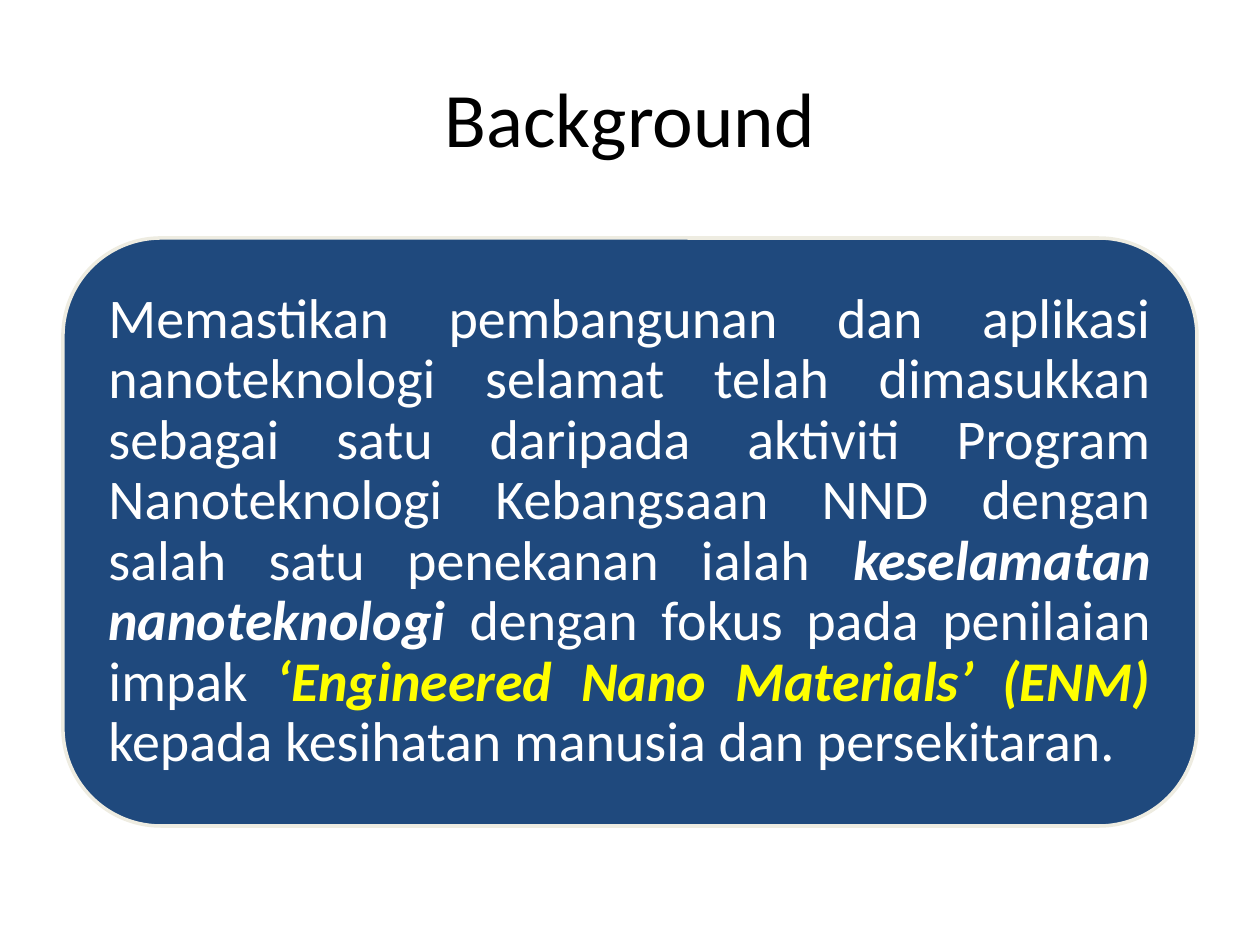
from pptx import Presentation
from pptx.dml.color import RGBColor as RGB
from pptx.enum.shapes import MSO_SHAPE as SHAPE
from pptx.enum.text import MSO_ANCHOR as ANCHOR, PP_ALIGN as ALIGN
from pptx.util import Pt

COLORS = {
    "title": "000000",
    "panel": "1F497D",
    "border": "EEECE1",
    "body": "FFFFFF",
    "accent": "FFFF00",
}

BODY = [
    ("Memastikan pembangunan dan aplikasi nanoteknologi selamat telah "
     "dimasukkan sebagai satu daripada aktiviti Program Nanoteknologi "
     "Kebangsaan NND dengan salah satu penekanan ialah ", "body", False),
    ("keselamatan nanoteknologi ", "body", True),
    ("dengan fokus pada penilaian impak ", "body", False),
    ("‘Engineered Nano Materials’ (ENM) ", "accent", True),
    ("kepada kesihatan manusia dan persekitaran.", "body", False),
]


class SlideBuilder:
    font = "Calibri"
    title_size = 44
    body_size = 32
    inset = 9.6

    def __init__(self, slide):
        self.slide = slide

    def color(self, name):
        return RGB.from_string(COLORS[name])

    def style_run(self, r, size, color, strong=False):
        r.font.name = self.font
        r.font.size = Pt(size)
        r.font.color.rgb = self.color(color)
        r.font.bold = r.font.italic = strong

    def title(self, text, left, top, width, height):
        s = self.slide.shapes.add_textbox(Pt(left), Pt(top), Pt(width), Pt(height))
        tf = s.text_frame
        tf.word_wrap = True
        tf.vertical_anchor = ANCHOR.MIDDLE
        tf.text = text
        p = tf.paragraphs[0]
        p.alignment = ALIGN.CENTER
        self.style_run(p.runs[0], self.title_size, "title")

    def panel(self, parts, left, top, width, height):
        s = self.slide.shapes.add_shape(
            SHAPE.ROUNDED_RECTANGLE, Pt(left), Pt(top), Pt(width), Pt(height))
        s.shadow.inherit = False
        s.fill.solid()
        s.fill.fore_color.rgb = self.color("panel")
        s.line.color.rgb = self.color("border")
        s.line.width = Pt(2)
        tf = s.text_frame
        tf.word_wrap = True
        tf.vertical_anchor = ANCHOR.MIDDLE
        tf.margin_left = tf.margin_right = Pt(self.inset)
        tf.margin_top = tf.margin_bottom = Pt(self.inset)
        p = tf.paragraphs[0]
        p.alignment = ALIGN.JUSTIFY
        p.line_spacing = 0.9
        for text, color, strong in parts:
            r = p.add_run()
            r.text = text
            self.style_run(r, self.body_size, color, strong)


def main():
    prs = Presentation()
    prs.slide_width, prs.slide_height = Pt(720), Pt(540)
    builder = SlideBuilder(prs.slides.add_slide(prs.slide_layouts[6]))
    builder.title("Background", 36, 21.6, 648, 90)
    builder.panel(BODY, 36, 136, 648, 336)
    prs.save("out.pptx")


if __name__ == "__main__":
    main()
